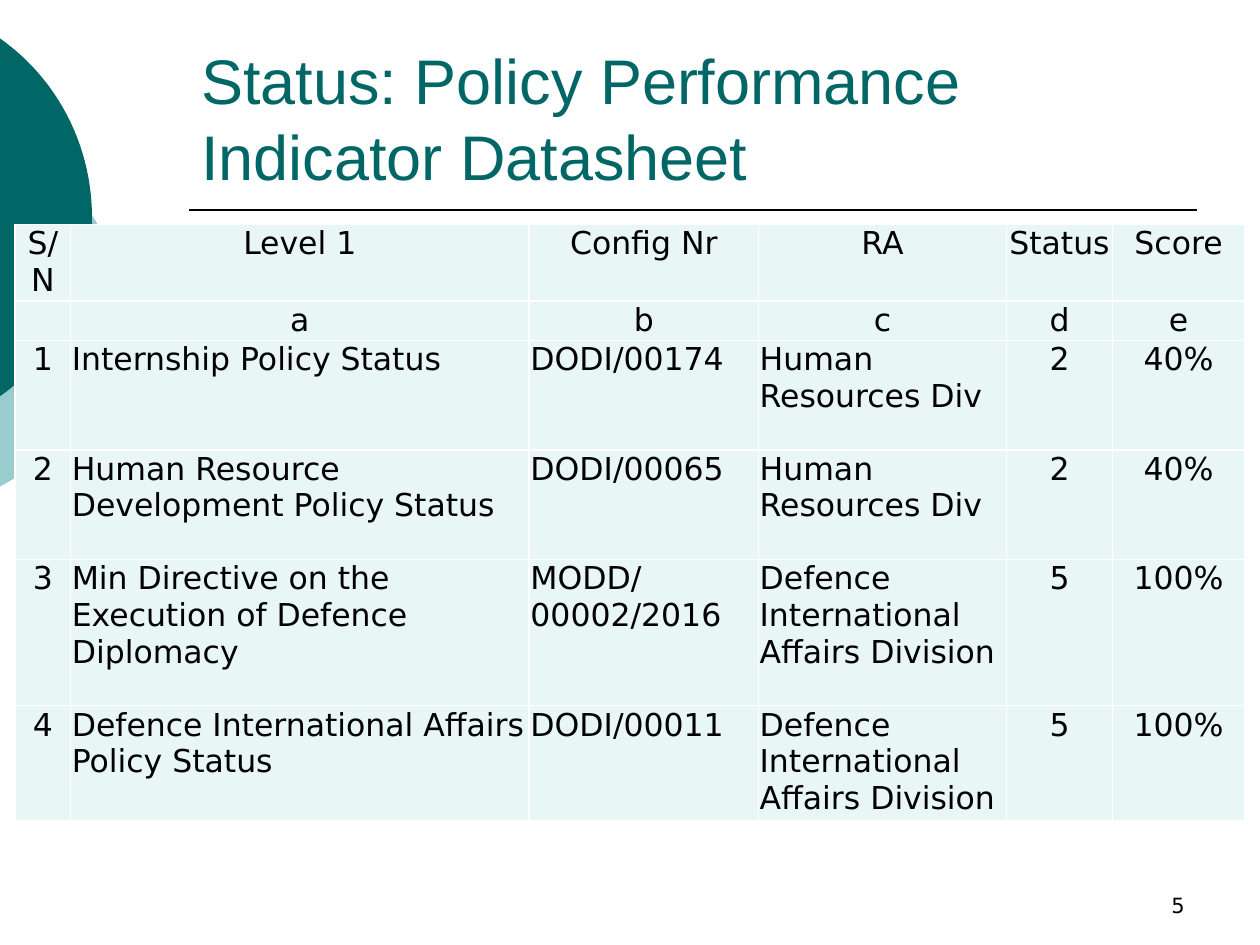
from lxml import etree
from pptx import Presentation
from pptx.dml.color import RGBColor
from pptx.enum import shapes, text
from pptx.oxml import ns
from pptx.util import Emu, Inches, Pt

TEAL, PALE_TEAL, CELL, BLACK, WHITE = "006666", "99CCCC", "E8F6F6", "000000", "FFFFFF"
HEAD_FONT, BODY_FONT = "Arial", "DejaVu Sans"
WIDTH, HEIGHT = 10, 7.5
TITLE = "Status: Policy Performance Indicator Datasheet"
PAGE = "5"
# Ellipses cut off by the left slide edge: left, top, width, height, colour
DISCS = [
    (-3.54, 0.75, 4.5, 3.42, PALE_TEAL),
    (-2.65, 0, 3.38, 3.45, TEAL),
]
ROWS = [
    ("S/N", "Level 1", "Config Nr", "RA", "Status", "Score"),
    ("", "a", "b", "c", "d", "e"),
    ("1", "Internship Policy Status", "DODI/00174", "Human Resources Div", "2", "40%"),
    ("2", "Human Resource Development Policy Status", "DODI/00065",
     "Human Resources Div", "2", "40%"),
    ("3", "Min Directive on the Execution of Defence Diplomacy", "MODD/00002/2016",
     "Defence International Affairs Division", "5", "100%"),
    ("4", "Defence International Affairs Policy Status", "DODI/00011",
     "Defence International Affairs Division", "5", "100%"),
]
HEADER_ROWS = 2
LEFT_COLS = (1, 2, 3)
COL_WIDTHS = (0.44, 3.64, 1.82, 1.97, 0.84, 1.05)
# Least heights: the header rows and the last row grow to fit their text
ROW_HEIGHTS = (0.21, 0.21, 0.87, 0.87, 1.16, 0.64)
TABLE_LEFT, TABLE_TOP = 0.12, 1.78
MARGIN_LEFT, MARGIN_RIGHT = 0.15 * WIDTH, 0.95 * WIDTH


def rgb(color):
    return RGBColor.from_string(color)


def style(p, content, size, font, color, align):
    p.text = content
    p.alignment = align
    p.font.size, p.font.name = Pt(size), font
    p.font.color.rgb = rgb(color)


def add_text(slide, box, *args):
    """Add a bottom-anchored text box."""
    tf = slide.shapes.add_textbox(*map(Inches, box)).text_frame
    tf.word_wrap = True
    tf.vertical_anchor = text.MSO_ANCHOR.BOTTOM
    style(tf.paragraphs[0], *args)


def add_disc(slide, *box, color):
    sp = slide.shapes.add_shape(shapes.MSO_SHAPE.OVAL, *map(Inches, box))
    sp.shadow.inherit = False
    sp.fill.solid()
    sp.fill.fore_color.rgb = rgb(color)
    sp.line.fill.background()


def add_rule(slide, y):
    line = slide.shapes.add_connector(
        shapes.MSO_CONNECTOR.STRAIGHT,
        Inches(MARGIN_LEFT), Inches(y), Inches(MARGIN_RIGHT), Inches(y))
    line.line.color.rgb = rgb(BLACK)
    line.line.width = Pt(1)
    etree.SubElement(line._element.spPr, ns.qn("a:effectLst"))


def set_borders(cell, color, width):
    tcPr = cell._tc.get_or_add_tcPr()
    for i, side in enumerate(("lnL", "lnR", "lnT", "lnB")):
        ln = etree.Element(ns.qn(f"a:{side}"), w=str(Pt(width)))
        fill = etree.SubElement(ln, ns.qn("a:solidFill"))
        etree.SubElement(fill, ns.qn("a:srgbClr"), val=color)
        tcPr.insert(i, ln)


def add_datasheet(slide):
    table = slide.shapes.add_table(
        len(ROWS), len(COL_WIDTHS), Inches(TABLE_LEFT), Inches(TABLE_TOP),
        Inches(sum(COL_WIDTHS)), Inches(sum(ROW_HEIGHTS))).table
    for col, width in zip(table.columns, COL_WIDTHS):
        col.width = Inches(width)
    for row, height in zip(table.rows, ROW_HEIGHTS):
        row.height = Inches(height)
    for r, values in enumerate(ROWS):
        for c, value in enumerate(values):
            cell = table.cell(r, c)
            cell.margin_left = cell.margin_right = cell.margin_top = Pt(0.75)
            cell.margin_bottom = Emu(0)
            cell.fill.solid()
            cell.fill.fore_color.rgb = rgb(CELL)
            set_borders(cell, WHITE, 1)
            is_left = r >= HEADER_ROWS and c in LEFT_COLS
            align = text.PP_ALIGN.LEFT if is_left else text.PP_ALIGN.CENTER
            style(cell.text_frame.paragraphs[0], value, 18, BODY_FONT, BLACK, align)


def main():
    prs = Presentation()
    prs.slide_width, prs.slide_height = Inches(WIDTH), Inches(HEIGHT)
    slide = prs.slides.add_slide(prs.slide_layouts[6])
    for *box, color in DISCS:
        add_disc(slide, *box, color=color)
    add_rule(slide, HEIGHT * 2 / 9)
    add_text(slide, (MARGIN_LEFT, 0.33, MARGIN_RIGHT - MARGIN_LEFT, 1.25),
             TITLE, 36, HEAD_FONT, TEAL, text.PP_ALIGN.LEFT)
    add_text(slide, (7.17, 6.83, MARGIN_RIGHT - 7.17, 0.5),
             PAGE, 12, BODY_FONT, BLACK, text.PP_ALIGN.RIGHT)
    add_datasheet(slide)
    prs.save("out.pptx")


if __name__ == "__main__":
    main()
